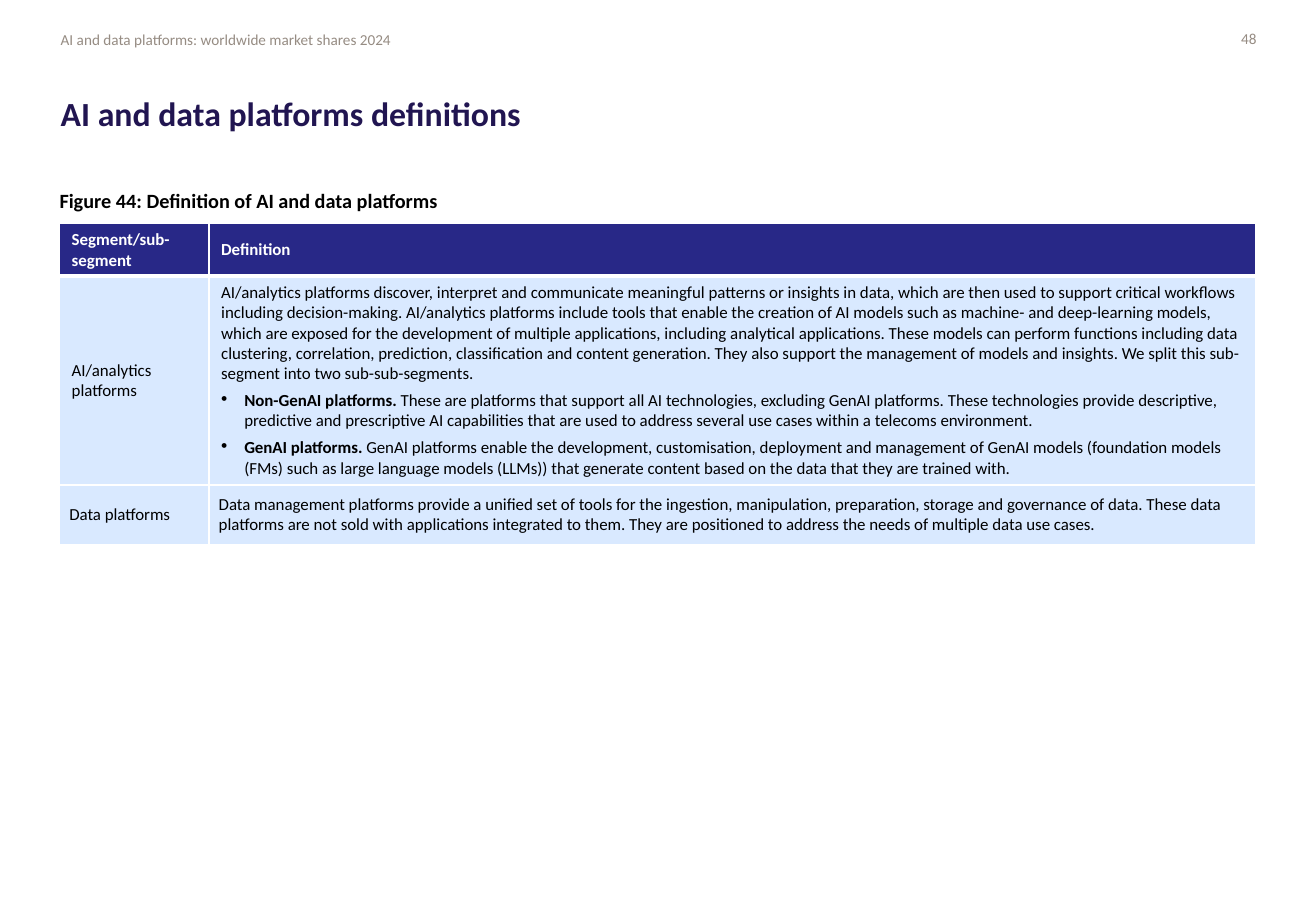
"""Build the slide that defines AI and data platforms."""
from dataclasses import dataclass

from lxml.etree import SubElement
from pptx import Presentation
from pptx.dml.color import RGBColor
from pptx.enum.text import MSO_ANCHOR, PP_ALIGN
from pptx.oxml import parse_xml
from pptx.oxml.ns import nsdecls, qn
from pptx.util import Inches, Pt


@dataclass(frozen=True)
class Theme:
    face: str = "Calibri"
    grey: str = "968C83"
    navy: str = "211551"
    black: str = "000000"
    white: str = "FFFFFF"
    head: str = "282887"
    pale: str = "D9E9FF"
    small: int = 9
    text: int = 10
    label: int = 12
    title: int = 20


theme = Theme()
deck = Presentation()
deck.slide_width, deck.slide_height = Inches(10.83), Inches(7.5)
slide = deck.slides.add_slide(deck.slide_layouts[6])


def style(para, size, color, bold=False):
    font = para.font
    font.name, font.size, font.bold = theme.face, Pt(size), bold
    font.color.rgb = RGBColor.from_string(color)


def write(text, place, size, color, bold=False, anchor=MSO_ANCHOR.MIDDLE):
    box = slide.shapes.add_textbox(*(Inches(n) for n in place))
    frame = box.text_frame
    frame.word_wrap = True
    frame.margin_left = frame.margin_right = 0
    frame.vertical_anchor = anchor
    para = frame.paragraphs[0]
    para.text = text
    style(para, size, color, bold)
    return para


header = write("AI and data platforms: worldwide market shares 2024",
               (0.5, 0.16, 3.23, 0.31), theme.small, theme.grey)
header.line_spacing = 1.1
number = write("48", (9.59, 0.16, 0.75, 0.31), theme.small, theme.grey)
number.alignment = PP_ALIGN.RIGHT
title = write("AI and data platforms definitions",
              (0.5, 0.51, 9.84, 0.83), theme.title, theme.navy, True)
title.line_spacing = Pt(25)
write("Figure 44: Definition of AI and data platforms",
      (0.49, 1.5, 9.84, 0.28), theme.label, theme.black, True, MSO_ANCHOR.TOP)

rows = [
    ([("", "Segment/sub-segment")], [("", "Definition")]),
    ([("", "AI/analytics platforms")], [
        ("", "AI/analytics platforms discover, interpret and communicate meaningful "
         "patterns or insights in data, which are then used to support critical "
         "workflows including decision-making. AI/analytics platforms include tools "
         "that enable the creation of AI models such as machine- and deep-learning "
         "models, which are exposed for the development of multiple applications, "
         "including analytical applications. These models can perform functions "
         "including data clustering, correlation, prediction, classification and "
         "content generation. They also support the management of models and "
         "insights. We split this sub-segment into two sub-sub-segments."),
        ("Non-GenAI platforms. ",
         "These are platforms that support all AI technologies, excluding GenAI "
         "platforms. These technologies provide descriptive, predictive and "
         "prescriptive AI capabilities that are used to address several use cases "
         "within a telecoms environment."),
        ("GenAI platforms. ",
         "GenAI platforms enable the development, customisation, deployment and "
         "management of GenAI models (foundation models (FMs) such as large language "
         "models (LLMs)) that generate content based on the data that they are "
         "trained with."),
    ]),
    ([("", "Data platforms")], [
        ("", "Data management platforms provide a unified set of tools for the "
         "ingestion, manipulation, preparation, storage and governance of data. "
         "These data platforms are not sold with applications integrated to them. "
         "They are positioned to address the needs of multiple data use cases."),
    ]),
]
table = slide.shapes.add_table(len(rows), 2, Inches(0.49), Inches(1.84),
                               Inches(9.84), Inches(2.64)).table
table.first_row = table.horz_banding = False
for col, width in zip(table.columns, (1.23, 8.61)):
    col.width = Inches(width)
for row, height in zip(table.rows, (0.43, 1.72, 0.49)):
    row.height = Inches(height)

for r, row in enumerate(rows):
    for c, items in enumerate(row):
        cell = table.cell(r, c)
        cell.vertical_anchor = MSO_ANCHOR.MIDDLE
        cell.fill.solid()
        cell.fill.fore_color.rgb = RGBColor.from_string(theme.pale if r else theme.head)
        if r == 2:
            cell.margin_left = cell.margin_right = Inches(0.08)
            cell.margin_top = cell.margin_bottom = Inches(0.08)
        props = cell._tc.get_or_add_tcPr()
        for i, side in enumerate("LRTB"):
            thick = 3 if (r, side) in ((0, "B"), (1, "T")) else 1
            props.insert(i, parse_xml(
                f'<a:ln{side} {nsdecls("a")} w="{Pt(thick)}"><a:solidFill>'
                f'<a:srgbClr val="{theme.white}"/></a:solidFill></a:ln{side}>'))
        frame = cell.text_frame
        for i, (lead, text) in enumerate(items):
            para = frame.add_paragraph() if i else frame.paragraphs[0]
            if lead:
                form = para._p.get_or_add_pPr()
                form.set("marL", str(Inches(0.19)))
                form.set("indent", str(-Inches(0.19)))
                SubElement(form, qn("a:buSzPct")).set("val", "110000")
                SubElement(form, qn("a:buChar")).set("char", "•")
                start = para.add_run()
                start.text, start.font.bold = lead, True
            para.add_run().text = text
            style(para, theme.text, theme.black if r else theme.white, r == 0)
            if r == 2 or (r, c) == (1, 1):
                para.line_spacing, para.space_after = Pt(12), Pt(2)
            if i:
                para.space_before = Pt(2)

deck.save("out.pptx")
